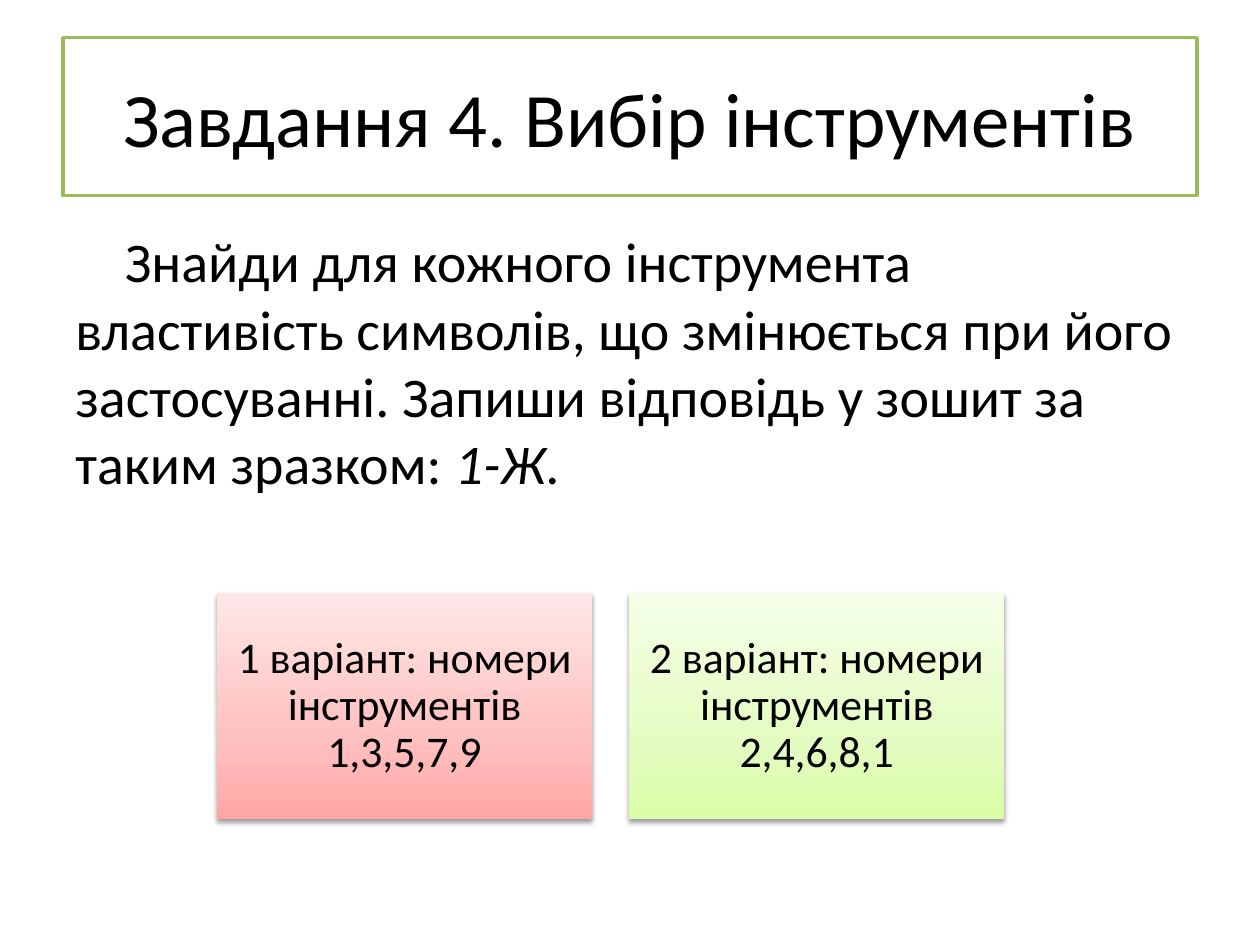
from lxml.etree import SubElement
from pptx import Presentation
from pptx.dml.color import RGBColor
from pptx.enum.shapes import MSO_SHAPE
from pptx.enum.text import MSO_ANCHOR, PP_ALIGN
from pptx.oxml.ns import qn
from pptx.util import Cm, Pt


def rgb(value):
    return RGBColor.from_string(value)


def set_attrs(obj, values):
    for name, value in values.items():
        setattr(obj, name, value)


def add_run(p, text, size, italic=False):
    r = p.add_run()
    r.text = text
    set_attrs(r.font, {"name": "Calibri", "size": Pt(size), "italic": italic})
    r.font.color.rgb = rgb("000000")


def add_rect(s, x, y, w, h, text, size):
    """Add a borderless rectangle with centred text."""
    sp = s.shapes.add_shape(MSO_SHAPE.RECTANGLE, Cm(x), Cm(y), Cm(w), Cm(h))
    sp.shadow.inherit = False
    sp.line.fill.background()
    tf = sp.text_frame
    set_attrs(tf, {"word_wrap": True, "vertical_anchor": MSO_ANCHOR.MIDDLE})
    p = tf.paragraphs[0]
    p.alignment = PP_ALIGN.CENTER
    add_run(p, text, size)
    return sp


def add_title(s, text):
    sp = add_rect(s, 1.27, 0.76, 22.86, 3.18, text, 44)
    sp.fill.solid()
    sp.fill.fore_color.rgb = rgb("FFFFFF")
    sp.line.color.rgb = rgb("9BBB59")
    sp.line.width = Pt(2)


def add_body(s, runs):
    tf = s.shapes.add_textbox(Cm(1.27), Cm(4.45), Cm(22.86), Cm(6.07)).text_frame
    tf.word_wrap = True
    p = tf.paragraphs[0]
    p._p.get_or_add_pPr().set("indent", str(Cm(1)))
    for text, italic in runs:
        add_run(p, text, 32, italic)


def add_color(parent, color):
    return SubElement(parent, qn("a:srgbClr"), val=color)


def set_gradient(sp, colors):
    """Fill upwards from the first colour to the last."""
    sp.fill.gradient()
    sp.fill.gradient_angle = 90
    stops = sp._element.spPr.find(".//" + qn("a:gsLst"))
    for gs in list(stops):
        stops.remove(gs)
    for pos, color in zip((0, 35, 100), colors):
        add_color(SubElement(stops, qn("a:gs"), pos=str(pos * 1000)), color)


def set_shadow(sp):
    effects = sp._element.spPr.find(qn("a:effectLst"))
    shadow = SubElement(effects, qn("a:outerShdw"), blurRad=str(Pt(3.1)),
                        dist=str(Pt(1.6)), dir="5400000", rotWithShape="0")
    SubElement(add_color(shadow, "000000"), qn("a:alpha"), val="38000")


def add_card(s, x, text, colors):
    sp = add_rect(s, x, 11.96, 7.57, 4.55, text, 25)
    set_gradient(sp, colors)
    set_shadow(sp)
    tf = sp.text_frame
    sides = ("left", "top", "right", "bottom")
    set_attrs(tf, {f"margin_{side}": Cm(0.25) for side in sides})
    tf.paragraphs[0].line_spacing = 0.9


def main():
    prs = Presentation()
    set_attrs(prs, {"slide_width": Cm(25.4), "slide_height": Cm(19.05)})
    s = prs.slides.add_slide(prs.slide_layouts[6])
    add_title(s, "Завдання 4. Вибір інструментів")
    add_body(s, [
        ("Знайди для кожного інструмента властивість символів, що змінюється "
         "при його застосуванні. Запиши відповідь у зошит за таким зразком: ", False),
        ("1-Ж", True),
        (".", False),
    ])
    cards = [
        ("1 варіант: номери інструментів 1,3,5,7,9", ("FFA6A5", "FFC0BF", "FFE7E7")),
        ("2 варіант: номери інструментів 2,4,6,8,1", ("DAFDA7", "E4FCC2", "F5FFE7")),
    ]
    for i, (text, colors) in enumerate(cards):
        add_card(s, 4.37 + i * 8.31, text, colors)
    prs.save("out.pptx")


if __name__ == "__main__":
    main()
